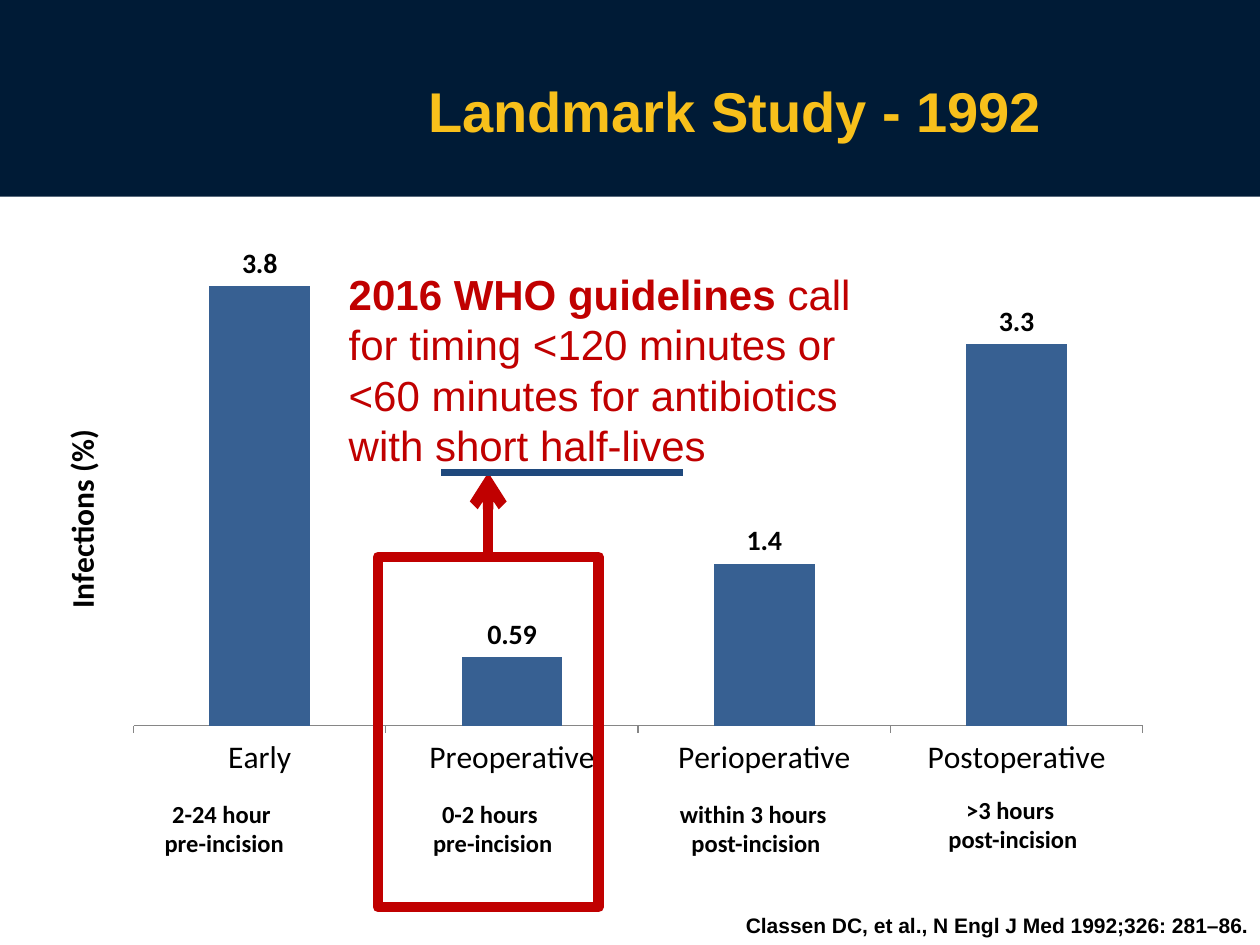
import pptx
import pptx.chart.data
import pptx.dml.color
import pptx.enum.chart
import pptx.enum.shapes
import pptx.enum.text
import pptx.oxml
import pptx.oxml.ns
import pptx.util
from lxml import etree

Pt = pptx.util.Pt
ALIGN = pptx.enum.text.PP_ALIGN
ANCHOR = pptx.enum.text.MSO_ANCHOR
RED = "C00000"


def color(value):
    return pptx.dml.color.RGBColor.from_string(value)


def points(*values):
    return [Pt(v) for v in values]


def style(font, size, name="Arial", bold=False, fill="000000"):
    font.size, font.name, font.bold = Pt(size), name, bold
    font.color.rgb = color(fill)


def add_text(s, box, lines, size, name, align, wrap=True):
    """Add bold black lines, one paragraph each."""
    tf = s.shapes.add_textbox(*points(*box)).text_frame
    tf.word_wrap = wrap
    tf.text = "\n".join(lines)
    for p in tf.paragraphs:
        p.alignment = align
        style(p.runs[0].font, size, name, bold=True)


def add_line(s, start, end, fill, width, arrow=False):
    line = s.shapes.add_connector(
        pptx.enum.shapes.MSO_CONNECTOR.STRAIGHT, *points(*start, *end))
    line.line.color.rgb = color(fill)
    line.line.width = Pt(width)
    sp_pr = line._element.spPr
    if arrow:
        head = etree.SubElement(line.line._get_or_add_ln(),
                                pptx.oxml.ns.qn("a:tailEnd"))
        head.set("type", "arrow")
    etree.SubElement(sp_pr, pptx.oxml.ns.qn("a:effectLst"))


def add_rectangle(s, box):
    sp = s.shapes.add_shape(pptx.enum.shapes.MSO_SHAPE.RECTANGLE, *points(*box))
    sp.shadow.inherit = False
    return sp


def add_header(s, band_box, title_box):
    # Dark band goes behind the title
    band = add_rectangle(s, band_box)
    band.fill.solid()
    band.fill.fore_color.rgb = color("001B36")
    band.line.fill.background()
    s.shapes._spTree.insert(2, band._element)

    title = s.shapes.title
    title.left, title.top, title.width, title.height = points(*title_box)
    tf = title.text_frame
    tf.text = "Landmark Study - 1992"
    tf.vertical_anchor = ANCHOR.MIDDLE
    tf.paragraphs[0].alignment = ALIGN.CENTER
    style(tf.paragraphs[0].runs[0].font, 32, bold=True, fill="F8C01B")


def layout_xml(inner=False, **values):
    """Manual chart layout, in fractions of the chart."""
    target = '<c:layoutTarget val="inner"/>' if inner else ""
    modes = '<c:xMode val="edge"/><c:yMode val="edge"/>'
    sizes = "".join(f'<c:{k} val="{v}"/>' for k, v in values.items())
    return pptx.oxml.parse_xml(
        f'<c:layout {pptx.oxml.ns.nsdecls("c")}><c:manualLayout>'
        f"{target}{modes}{sizes}</c:manualLayout></c:layout>")


def add_infection_chart(s, box):
    data = pptx.chart.data.CategoryChartData()
    data.categories = ["Early", "Preoperative", "Perioperative", "Postoperative"]
    data.add_series("Series 1", [3.8, 0.59, 1.4, 3.3])
    chart = s.shapes.add_chart(
        pptx.enum.chart.XL_CHART_TYPE.COLUMN_CLUSTERED, *points(*box), data).chart
    chart.has_legend = chart.has_title = False
    style(chart.font, 16)

    # Columns and their values
    plot = chart.plots[0]
    plot.gap_width = 150
    plot.vary_by_categories = False
    fill = plot.series[0].format.fill
    fill.solid()
    fill.fore_color.rgb = color("376092")
    plot.has_data_labels = True
    labels = plot.data_labels
    labels.show_value = True
    labels.position = pptx.enum.chart.XL_LABEL_POSITION.OUTSIDE_END
    style(labels.font, 16, "Calibri", bold=True)

    # Axes
    cat = chart.category_axis
    cat.format.line.color.rgb = color("868686")
    style(cat.tick_labels.font, 18, "Calibri")
    val = chart.value_axis
    val.visible = val.has_major_gridlines = False
    val.minimum_scale, val.maximum_scale = 0, 4
    val.axis_title.text_frame.text = "Infections (%)"
    style(val.axis_title.text_frame.paragraphs[0].runs[0].font,
          18, "Calibri", bold=True)

    # Placement of the plot and the axis title
    area = chart._chartSpace.chart.plotArea
    parts = ((area, layout_xml(inner=True, x=0.09, y=0.03, w=0.89, h=0.86)),
             (val.axis_title._element, layout_xml(x=0.02, y=0.33)))
    for parent, layout in parts:
        for old in parent.findall(pptx.oxml.ns.qn("c:layout")):
            parent.remove(old)
        text = parent.find(pptx.oxml.ns.qn("c:tx"))
        parent.insert(0 if text is None else 1, layout)


def add_captions(s, top, height):
    captions = (
        (86.4, 0, 83.5, "2-24 hour ", "pre-incision"),
        (239.8, 0, 83.5, "0-2 hours ", "pre-incision"),
        (380.9, 0, 102.2, "within 3 hours ", "post-incision"),
        (534.2, -2.2, 89.3, ">3 hours ", "post-incision"),
    )
    for left, shift, width, *lines in captions:
        add_text(s, (left, top + shift, width, height), lines,
                 14, "Calibri", ALIGN.CENTER, wrap=False)


def add_guideline(s, frame_box, text_box):
    # Frame around the preoperative column, with an arrow to the text
    frame = add_rectangle(s, frame_box)
    frame.fill.background()
    frame.line.color.rgb = color(RED)
    frame.line.width = Pt(6)
    etree.SubElement(frame.line._get_or_add_ln(), pptx.oxml.ns.qn("a:round"))
    left, top, width, _ = frame_box
    x = left + width / 2
    add_line(s, (x, top), (x, top - 48.2), RED, 6, arrow=True)

    # Guideline text
    tf = s.shapes.add_textbox(*points(*text_box)).text_frame
    tf.word_wrap = True
    p = tf.paragraphs[0]
    for text, bold in (
            ("2016 WHO guidelines ", True),
            ("call for timing <120 minutes or <60 minutes for antibiotics "
             "with short half-lives", False)):
        r = p.add_run()
        r.text = text
        style(r.font, 24, bold=bold, fill=RED)

    # Underline of the last words
    add_line(s, (252, 270), (390.2, 270), "1F497D", 4.5)


def main():
    prs = pptx.Presentation()
    prs.slide_width, prs.slide_height = points(720, 540)
    s = prs.slides.add_slide(prs.slide_layouts[5])
    add_header(s, (0, -1.4, 720, 113.8), (144, 18, 552.2, 90))
    add_infection_chart(s, (18, 141.1, 648, 307.4))
    add_captions(s, 452.9, 41)
    add_text(s, (354.2, 517.7, 366.5, 21.6),
             ["Classen DC, et al., N Engl J Med 1992;326: 281–86."],
             12, "Arial", ALIGN.RIGHT)
    add_guideline(s, (216, 318.2, 126, 200.2), (192.2, 149.8, 306, 123.8))
    prs.save("out.pptx")


if __name__ == "__main__":
    main()
